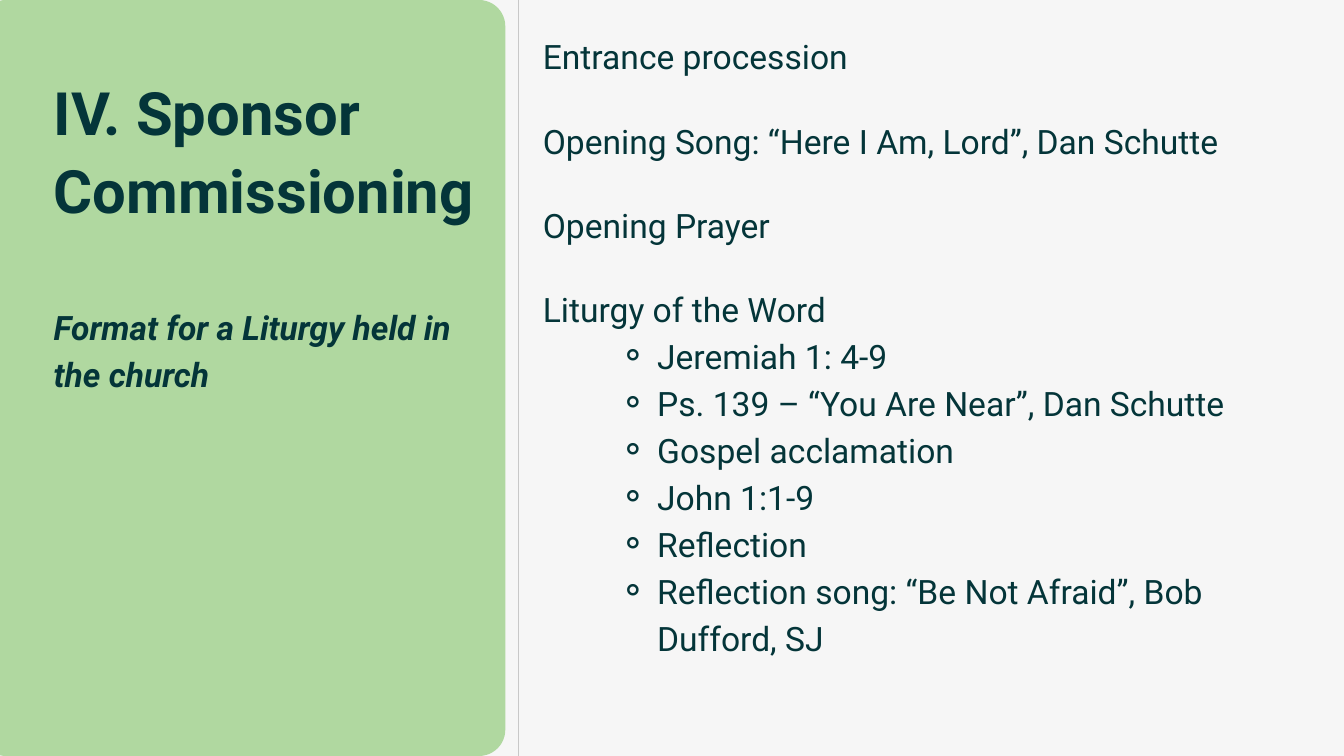
from dataclasses import dataclass

from lxml.etree import SubElement
from pptx import Presentation
from pptx.dml.color import RGBColor
from pptx.enum.shapes import MSO_CONNECTOR, MSO_SHAPE
from pptx.enum.text import MSO_ANCHOR, MSO_AUTO_SIZE
from pptx.oxml.ns import qn
from pptx.slide import Slide
from pptx.util import Cm, Pt

PAPER = RGBColor(0xF6, 0xF6, 0xF6)
LEAF = RGBColor(0xB0, 0xD8, 0xA0)
INK = RGBColor(0x04, 0x35, 0x39)
RULE = RGBColor(0xC8, 0xC8, 0xC8)

SLIDE_WIDTH, SLIDE_HEIGHT = Cm(50.8), Cm(28.58)
ORDER_LEFT, ORDER_TOP, ORDER_STEP = 20.52, 1.12, 3.18
FRAME_FORMAT = {
    "margin_left": 0, "margin_top": 0, "margin_right": 0, "margin_bottom": 0,
    "word_wrap": True, "auto_size": MSO_AUTO_SIZE.NONE,
    "vertical_anchor": MSO_ANCHOR.TOP,
}
BODY_FONT = {"name": "Roboto", "size": Pt(36)}
TITLE_FONT = {"name": "Roboto", "size": Pt(64), "bold": True}
SUBTITLE_FONT = BODY_FONT | {"bold": True, "italic": True}


@dataclass(frozen=True)
class Passage:
    text: str
    left: float
    top: float
    width: float
    height: float
    font: dict
    leading: float = 50.4
    readings: tuple[str, ...] = ()


@dataclass(frozen=True)
class Rite:
    text: str
    width: float
    height: float = 1.73
    readings: tuple[str, ...] = ()


RITES = (
    Rite("Entrance procession", 22.53),
    Rite("Opening Song: “Here I Am, Lord”, Dan Schutte", 27.41),
    Rite("Opening Prayer", 22.53),
    Rite("Liturgy of the Word", 25.93, 17.68, (
        "Jeremiah 1: 4-9",
        "Ps. 139 – “You Are Near”, Dan Schutte",
        "Gospel acclamation",
        "John 1:1-9",
        "Reflection",
        "Reflection song: “Be Not Afraid”, Bob Dufford, SJ",
    )),
)
HEADINGS = (
    Passage("IV. Sponsor Commissioning", 2.03, 2.64, 16.64, 5.82, TITLE_FONT, 83.2),
    Passage("Format for a Liturgy held in the church", 2.03, 11.35, 15.88, 3.51, SUBTITLE_FONT),
)


def apply_format(target: object, values: dict) -> None:
    for attribute, value in values.items():
        setattr(target, attribute, value)


def add_passage(slide: Slide, passage: Passage) -> None:
    box = slide.shapes.add_textbox(
        Cm(passage.left), Cm(passage.top), Cm(passage.width), Cm(passage.height))
    frame = box.text_frame
    apply_format(frame, FRAME_FORMAT)
    for index, text in enumerate((passage.text, *passage.readings)):
        paragraph = frame.add_paragraph() if index else frame.paragraphs[0]
        paragraph.line_spacing = Pt(passage.leading)
        run = paragraph.add_run()
        run.text = text
        apply_format(run.font, passage.font)
        run.font.color.rgb = INK
        if index:
            paragraph.level = 2
            properties = paragraph._p.get_or_add_pPr()
            properties.set("marL", str(Cm(4.32)))
            properties.set("indent", str(Cm(-1.45)))
            SubElement(properties, qn("a:buFont"), typeface="Arial")
            SubElement(properties, qn("a:buChar"), char="⚬")


def add_panel(slide: Slide) -> None:
    panel = slide.shapes.add_shape(
        MSO_SHAPE.ROUNDED_RECTANGLE, Cm(-0.76), 0, Cm(19.86), SLIDE_HEIGHT)
    panel.adjustments[0] = 0.05
    panel.shadow.inherit = False
    panel.fill.solid()
    panel.fill.fore_color.rgb = LEAF
    panel.line.fill.background()


def add_divider(slide: Slide) -> None:
    divider = slide.shapes.add_connector(
        MSO_CONNECTOR.STRAIGHT, Cm(19.58), 0, Cm(19.58), SLIDE_HEIGHT)
    divider.line.color.rgb = RULE
    divider.line.width = Pt(0.75)
    SubElement(divider._element.spPr, qn("a:effectLst"))


def main() -> None:
    """Build the sponsor commissioning slide."""
    presentation = Presentation()
    apply_format(presentation, {"slide_width": SLIDE_WIDTH, "slide_height": SLIDE_HEIGHT})
    slide = presentation.slides.add_slide(presentation.slide_layouts[6])
    slide.background.fill.solid()
    slide.background.fill.fore_color.rgb = PAPER

    add_panel(slide)
    for position, rite in enumerate(RITES):
        add_passage(slide, Passage(
            rite.text, ORDER_LEFT, ORDER_TOP + position * ORDER_STEP,
            rite.width, rite.height, BODY_FONT, readings=rite.readings))
    add_divider(slide)
    for heading in HEADINGS:
        add_passage(slide, heading)
    presentation.save("out.pptx")


if __name__ == "__main__":
    main()
